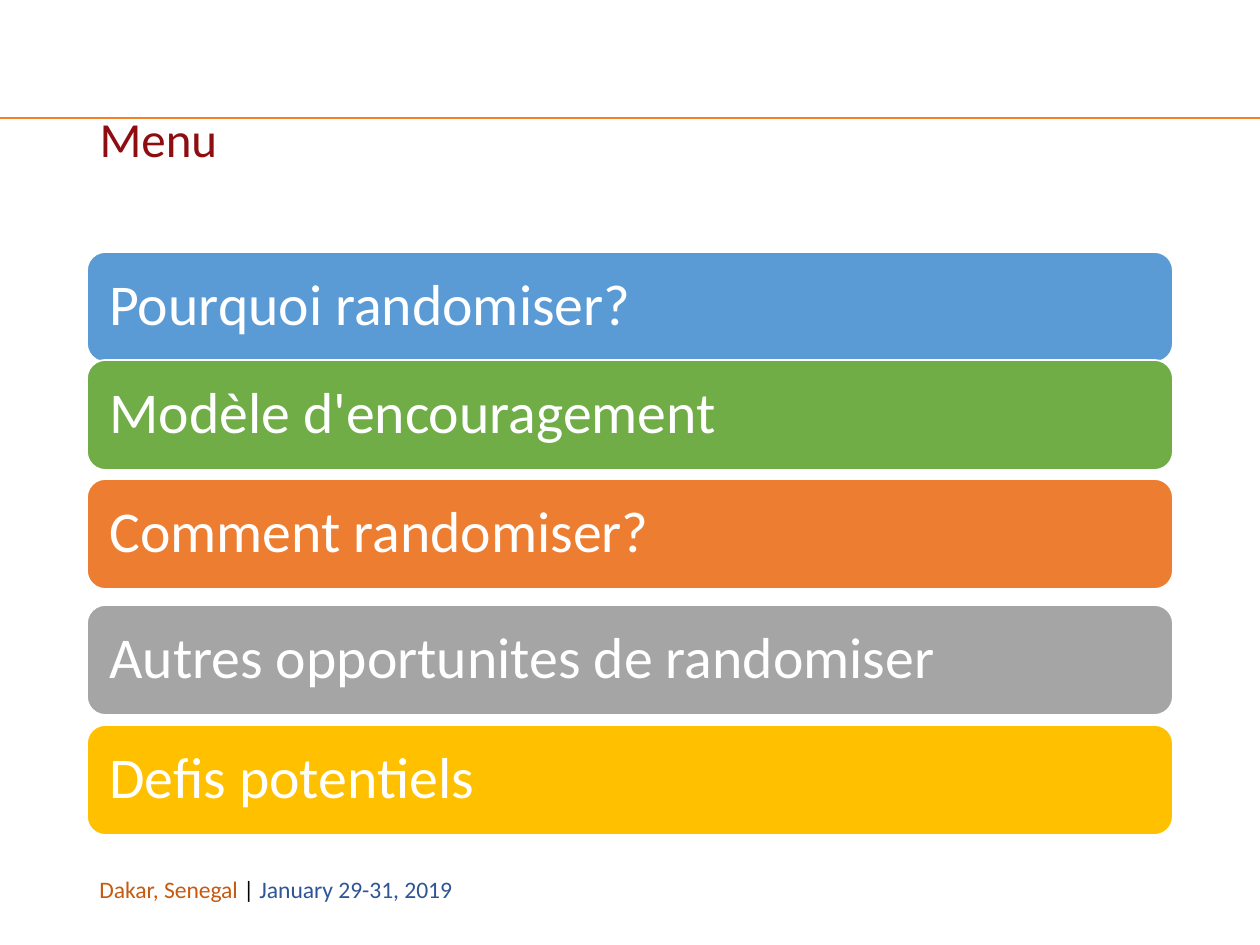
import lxml.etree
import pptx
import pptx.dml.color
import pptx.enum.shapes
import pptx.enum.text
import pptx.oxml.ns
import pptx.util

PX = 914400 / 126  # EMU per px
LEFT, WIDTH = 87, 1086
BAR_HEIGHT = 110


def px(*lengths):
    return [pptx.util.Emu(round(length * PX)) for length in lengths]


def add_run(paragraph, text, size, color):
    run = paragraph.add_run()
    run.text = text
    run.font.name = "Calibri"
    run.font.size = pptx.util.Pt(size)
    run.font.color.rgb = rgb(color)


rgb = pptx.dml.color.RGBColor.from_string

presentation = pptx.Presentation()
presentation.slide_width, presentation.slide_height = px(1260, 945)
slide = presentation.slides.add_slide(presentation.slide_layouts[5])

# Header rule
rule = slide.shapes.add_connector(
    pptx.enum.shapes.MSO_CONNECTOR.STRAIGHT, *px(1260, 118, 0, 118))
rule.line.color.rgb = rgb("F58220")
rule.line.width = pptx.util.Pt(1.5)
properties = rule.element.find(pptx.oxml.ns.qn("p:spPr"))
lxml.etree.SubElement(properties, pptx.oxml.ns.qn("a:effectLst"))

# Footer
footer = slide.shapes.add_textbox(*px(LEFT, 869, 387, 71))
footer.text_frame.word_wrap = False
paragraph = footer.text_frame.paragraphs[0]
for text, color in [("Dakar, Senegal ", "C55A11"), ("| ", "000000"),
                    ("January 29-31, 2019", "2F5597")]:
    add_run(paragraph, text, 13.5, color)

# Title
title = slide.shapes.title
title.left, title.top, title.width, title.height = px(LEFT, 50, WIDTH, 183)
title.text_frame.auto_size = pptx.enum.text.MSO_AUTO_SIZE.NONE
title.text_frame.vertical_anchor = pptx.enum.text.MSO_ANCHOR.MIDDLE
paragraph = title.text_frame.paragraphs[0]
paragraph.alignment = pptx.enum.text.PP_ALIGN.LEFT
paragraph.line_spacing = 0.9
add_run(paragraph, "Menu", 28, "8D0D11")

# Menu bars: top, fill, text
bars = [
    (252, "5B9BD5", "Pourquoi randomiser?"),
    (360, "70AD47", "Modèle d'encouragement"),
    (479, "ED7D31", "Comment randomiser?"),
    (605, "A5A5A5", "Autres opportunites de randomiser"),
    (725, "FFC000", "Defis potentiels"),
]
for top, fill, text in bars:
    bar = slide.shapes.add_shape(
        pptx.enum.shapes.MSO_SHAPE.ROUNDED_RECTANGLE,
        *px(LEFT, top, WIDTH, BAR_HEIGHT))
    bar.shadow.inherit = False
    bar.fill.solid()
    bar.fill.fore_color.rgb = rgb(fill)
    bar.line.color.rgb = rgb("FFFFFF")
    bar.line.width = pptx.util.Pt(1)
    frame = bar.text_frame
    frame.word_wrap = True
    frame.vertical_anchor = pptx.enum.text.MSO_ANCHOR.MIDDLE
    (frame.margin_left, frame.margin_top,
     frame.margin_right, frame.margin_bottom) = px(17, 17, 17, 17)
    paragraph = frame.paragraphs[0]
    paragraph.alignment = pptx.enum.text.PP_ALIGN.LEFT
    paragraph.line_spacing = 0.9
    add_run(paragraph, text, 33, "FFFFFF")

presentation.save("out.pptx")
